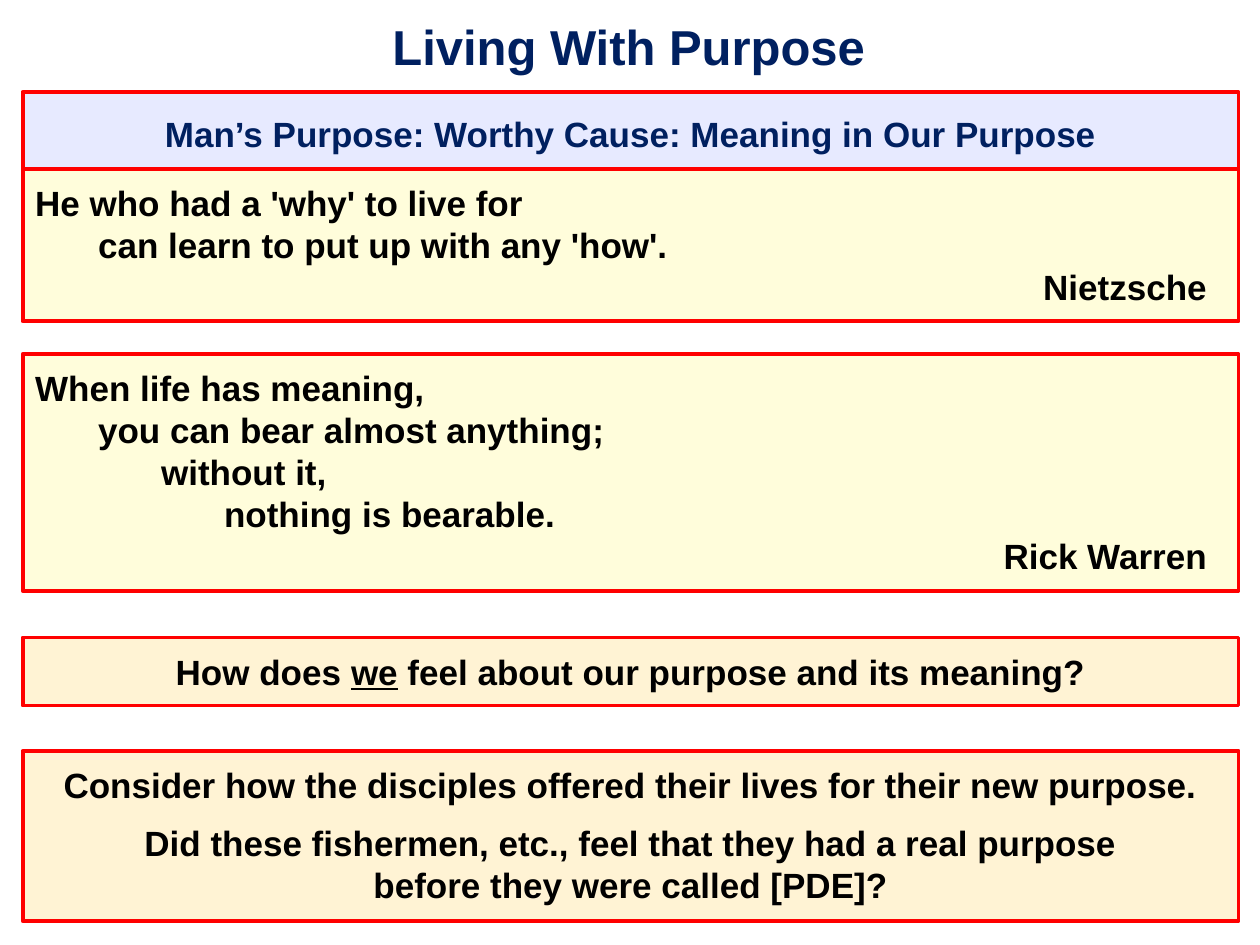
import pptx
import pptx.util
import pptx.dml.color
import pptx.enum.shapes
import pptx.enum.text
import pptx.oxml
import pptx.oxml.ns

Inches = pptx.util.Inches
Pt = pptx.util.Pt
RGBColor = pptx.dml.color.RGBColor
ALIGN = pptx.enum.text.PP_ALIGN
ANCHOR = pptx.enum.text.MSO_ANCHOR
FIT = pptx.enum.text.MSO_AUTO_SIZE

NAVY = RGBColor(0x00, 0x20, 0x60)
BLACK = RGBColor(0x00, 0x00, 0x00)
RED = RGBColor(0xFF, 0x00, 0x00)
BLUE = RGBColor(0xD0, 0xD6, 0xFF)
CREAM = RGBColor(0xFF, 0xFD, 0xB8)
PEACH = RGBColor(0xFF, 0xE8, 0xAA)

LEFT, WIDTH = 0.18, 9.65
STEP = 0.5
NAME_TAB = 9.3


def apply(target, values):
    for name, value in values.items():
        setattr(target, name, value)


def add_run(para, text, size=20, color=BLACK, under=False):
    run = para.add_run()
    run.text = text
    apply(run.font, {"name": "Arial", "size": Pt(size), "bold": True, "underline": under})
    run.font.color.rgb = color


def make_child(parent, tag, **values):
    child = pptx.oxml.ns.qn(tag)
    node = parent.makeelement(child, values)
    parent.append(node)
    return node


def set_frame(frame, pads, anchor, fit):
    names = ("margin_left", "margin_top", "margin_right", "margin_bottom")
    apply(frame, {name: Inches(pad) for name, pad in zip(names, pads)})
    apply(frame, {"word_wrap": True, "vertical_anchor": anchor, "auto_size": fit})


def add_title(slide, box, text):
    title = slide.shapes.title
    sides = ("left", "top", "width", "height")
    apply(title, {side: Inches(size) for side, size in zip(sides, box)})
    set_frame(title.text_frame, (0.06, 0.06, 0.14, 0.06), ANCHOR.MIDDLE, FIT.NONE)
    para = title.text_frame.paragraphs[0]
    para.alignment = ALIGN.CENTER
    add_run(para, text, 28, NAVY)


def add_panel(slide, top, height, fill):
    panel = slide.shapes.add_shape(
        pptx.enum.shapes.MSO_SHAPE.RECTANGLE,
        Inches(LEFT), Inches(top), Inches(WIDTH), Inches(height))
    panel.shadow.inherit = False
    panel.fill.solid()
    panel.fill.fore_color.rgb = fill
    tint = panel.fill._xPr.find(".//" + pptx.oxml.ns.qn("a:srgbClr"))
    make_child(tint, "a:alpha", val="50000")
    panel.line.color.rgb = RED
    panel.line.width = Pt(2.25)
    set_frame(panel.text_frame, (0.1,) * 4, ANCHOR.TOP, FIT.SHAPE_TO_FIT_TEXT)
    return panel.text_frame


def add_para(frame, first, align):
    para = frame.paragraphs[0] if first else frame.add_paragraph()
    para.alignment = align
    return para


def add_quote(slide, top, height, lines, name):
    frame = add_panel(slide, top, height, CREAM)
    for level, text in enumerate(lines):
        para = add_para(frame, level == 0, ALIGN.LEFT)
        props = para._p.get_or_add_pPr()
        props.set("marL", str(Inches(level * STEP)))
        props.set("indent", "0")
        add_run(para, text)
    para = add_para(frame, False, ALIGN.LEFT)
    tabs = make_child(para._p.get_or_add_pPr(), "a:tabLst")
    make_child(tabs, "a:tab", pos=str(Inches(NAME_TAB)), algn="r")
    add_run(para, "\t" + name)


def add_note(slide, top, height, fill, lines, color=BLACK):
    frame = add_panel(slide, top, height, fill)
    for row, (parts, form) in enumerate(lines):
        para = add_para(frame, row == 0, ALIGN.CENTER)
        apply(para, form)
        for spot, text in enumerate(parts):
            add_run(para, text, color=color, under=spot % 2 == 1)


def main():
    deck = pptx.Presentation()
    apply(deck, {"slide_width": Inches(10), "slide_height": Inches(7.5)})
    slide = deck.slides.add_slide(deck.slide_layouts[5])
    add_title(slide, (0.14, 0.02, 9.78, 0.69), "Living With Purpose")
    add_note(slide, 0.73, 0.61, BLUE, [
        (["Man’s Purpose: Worthy Cause: Meaning in Our Purpose"], {"line_spacing": 1.2}),
    ], NAVY)
    add_quote(slide, 1.34, 1.21, [
        "He who had a 'why' to live for",
        "can learn to put up with any 'how'.",
    ], "Nietzsche")
    add_quote(slide, 2.81, 1.88, [
        "When life has meaning,",
        "you can bear almost anything;",
        "without it,",
        "nothing is bearable.",
    ], "Rick Warren")
    add_note(slide, 5.06, 0.54, PEACH, [
        (["How does ", "we", " feel about our purpose and its meaning?"], {}),
    ])
    add_note(slide, 5.96, 1.35, PEACH, [
        (["Consider how the disciples offered their lives for their new purpose."], {}),
        (["Did these fishermen, etc., feel that they had a real purpose"],
         {"space_before": Pt(9.2)}),
        (["before they were called [PDE]?"], {}),
    ])
    deck.save("out.pptx")


if __name__ == "__main__":
    main()
